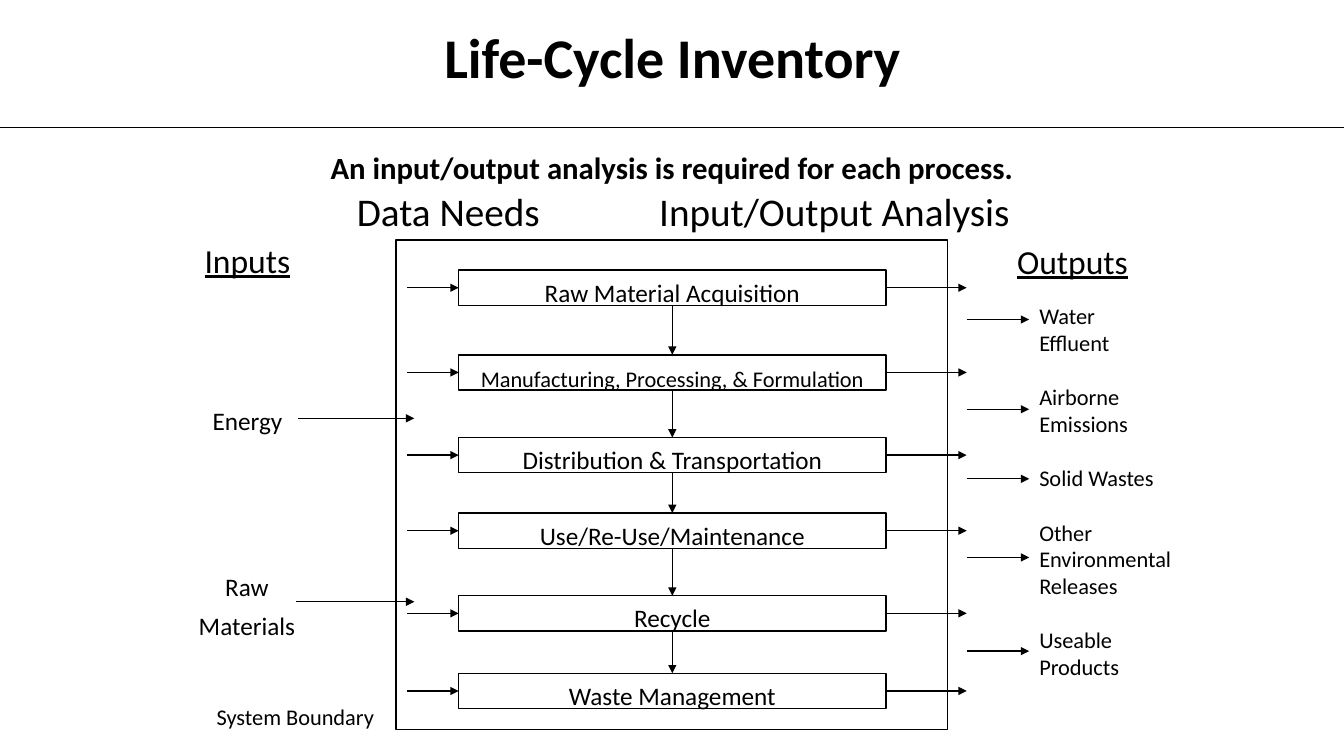
from dataclasses import dataclass

from lxml import etree
from pptx import Presentation
from pptx import util as u
from pptx.dml import color
from pptx.enum import shapes, text
from pptx.oxml import ns

CELL = 0.1  # the grid has square cells, a tenth of an inch wide
COLUMNS, ROWS = 133.33, 75
BLACK = "000000"
FONT = "Calibri"
LEADING = u.Pt(28)
LEFT, CENTER = text.PP_ALIGN.LEFT, text.PP_ALIGN.CENTER
TOP, MIDDLE, BOTTOM = (text.MSO_ANCHOR.TOP, text.MSO_ANCHOR.MIDDLE,
                       text.MSO_ANCHOR.BOTTOM)


@dataclass
class Area:
    column: float
    row: float
    columns: float
    rows: float


@dataclass
class Style:
    size: float
    bold: bool = False
    underline: bool = False
    align: text.PP_ALIGN = CENTER
    anchor: text.MSO_ANCHOR = TOP
    spacing: float | u.Length = 1.0


@dataclass
class Label:
    words: str
    area: Area
    style: Style


@dataclass
class Process:
    name: str
    row: float
    size: float = 18


@dataclass
class Output:
    lines: tuple[str, ...]
    arrow_row: float


TITLE = Label("Life-Cycle Inventory", Area(28.3, 2.4, 76.8, 7.1),
              Style(40, bold=True, anchor=MIDDLE, spacing=0.9))
LABELS = [
    Label("An input/output analysis is required for each process.",
          Area(27.9, 14.5, 77.5, 4.6),
          Style(22, bold=True, anchor=MIDDLE, spacing=0.9)),
    Label("Inputs", Area(18.9, 23.4, 11.3, 4.9),
          Style(24, underline=True, spacing=LEADING)),
    Label("Outputs", Area(99.4, 23.4, 14, 5), Style(24, underline=True)),
    Label("Energy", Area(19.9, 38.8, 9.3, 4.6), Style(18, spacing=LEADING)),
    Label("Raw Materials", Area(18.2, 55.3, 12.6, 8.8),
          Style(18, spacing=LEADING)),
    Label("System Boundary", Area(17.2, 68.2, 24.2, 4.6),
          Style(16, anchor=MIDDLE, spacing=LEADING)),
]
HEADINGS = Label("Data Needs\t\tInput/Output Analysis",
                 Area(35.4, 19.9, 65.4, 3.8),
                 Style(28, align=LEFT, anchor=BOTTOM, spacing=u.Pt(20)))
HEADING_TABS = (20, 30)

BOUNDARY = Area(39.3, 23.8, 54.7, 48.6)
PROCESSES = [
    Process("Raw Material Acquisition", 26.8),
    Process("Manufacturing, Processing, & Formulation", 35.2, 16),
    Process("Distribution & Transportation", 43.4),
    Process("Use/Re-Use/Maintenance", 50.9),
    Process("Recycle", 59.1),
    Process("Waste Management", 66.8),
]
PROCESS_COLUMN, PROCESS_COLUMNS, PROCESS_ROWS = 45.5, 42.4, 3.5
INPUT_COLUMN, OUTPUT_COLUMN, LIST_COLUMN = 40.4, 95.9, 102.1
SUPPLY_ARROWS = [(29.6, 41.5), (29.4, 59.7)]  # start column, row
SUPPLY_END = 41.1

OUTPUT_AREA = Area(LIST_COLUMN, 29.5, 15.4, 38.7)
OUTPUTS = [
    Output(("Water", "Effluent"), 31.7),
    Output(("Airborne", "Emissions"), 40.6),
    Output(("Solid Wastes",), 47.5),
    Output(("Other", "Environmental", "Releases"), 55.3),
    Output(("Useable", "Products"), 64.6),
]
OUTPUT_GAP = u.Pt(19.5)


def grid(cells: float) -> u.Length:
    return u.Inches(cells * CELL)


def place(area: Area) -> tuple[u.Length, ...]:
    return tuple(map(grid, (area.column, area.row, area.columns, area.rows)))


def rgb(value: str) -> color.RGBColor:
    return color.RGBColor.from_string(value)


def prepare(frame, style: Style, side: float = 1, edge: float = 0.5) -> None:
    """Set anchor, wrapping and insets (in grid cells) of a text frame."""
    frame.word_wrap = True
    frame.auto_size = text.MSO_AUTO_SIZE.NONE
    frame.vertical_anchor = style.anchor
    frame.margin_left = frame.margin_right = grid(side)
    frame.margin_top = frame.margin_bottom = grid(edge)


def write(para, words: str, style: Style) -> None:
    para.alignment = style.align
    para.line_spacing = style.spacing
    para.space_before = u.Pt(0)
    span = para.add_run()
    span.text = words
    span.font.name = FONT
    span.font.size = u.Pt(style.size)
    span.font.bold = style.bold
    span.font.underline = style.underline
    span.font.color.rgb = rgb(BLACK)


def move(shape, area: Area) -> None:
    shape.left, shape.top, shape.width, shape.height = place(area)


def add_label(page, label: Label, side: float = 1):
    box = page.shapes.add_textbox(*place(label.area))
    prepare(box.text_frame, label.style, side)
    para = box.text_frame.paragraphs[0]
    write(para, label.words, label.style)
    return para


def add_headings(page) -> None:
    para = add_label(page, HEADINGS, side=0)
    stops = etree.SubElement(para._p.get_or_add_pPr(), ns.qn("a:tabLst"))
    for stop in HEADING_TABS:
        etree.SubElement(stops, ns.qn("a:tab"), pos=str(grid(stop)), algn="l")


def add_box(page, area: Area):
    box = page.shapes.add_shape(shapes.MSO_SHAPE.RECTANGLE, *place(area))
    box.shadow.inherit = False
    box.fill.background()
    box.line.color.rgb = rgb(BLACK)
    box.line.width = u.Pt(1)
    return box


def add_process(page, process: Process):
    box = add_box(page, Area(PROCESS_COLUMN, process.row,
                             PROCESS_COLUMNS, PROCESS_ROWS))
    style = Style(process.size, anchor=MIDDLE, spacing=LEADING)
    prepare(box.text_frame, style, 0, 0)
    write(box.text_frame.paragraphs[0], process.name, style)
    return box


def add_line(page, start: float, end: float, row: float,
             width: float = 1, arrow: bool = True):
    """Draw a level line between two columns."""
    line = page.shapes.add_connector(shapes.MSO_CONNECTOR.STRAIGHT, grid(start),
                                     grid(row), grid(end), grid(row))
    line.line.width = u.Pt(width)
    line.line.color.rgb = rgb(BLACK)
    properties = line._element.spPr
    if arrow:
        etree.SubElement(properties.find(ns.qn("a:ln")), ns.qn("a:tailEnd"),
                         type="triangle")
    etree.SubElement(properties, ns.qn("a:effectLst"))
    return line


def add_flow(page) -> None:
    """Draw the chain of processes with their input and output arrows."""
    previous = None
    for process in PROCESSES:
        box = add_process(page, process)
        middle = process.row + PROCESS_ROWS / 2
        add_line(page, INPUT_COLUMN, PROCESS_COLUMN, middle).end_connect(box, 1)
        add_line(page, PROCESS_COLUMN + PROCESS_COLUMNS, OUTPUT_COLUMN,
                 middle).begin_connect(box, 3)
        if previous is not None:
            step = add_line(page, PROCESS_COLUMN, PROCESS_COLUMN, middle)
            step.begin_connect(previous, 2)
            step.end_connect(box, 0)
        previous = box


def fill_outputs(page, body) -> None:
    move(body, OUTPUT_AREA)
    style = Style(16, align=LEFT)
    frame = body.text_frame
    prepare(frame, style)
    para = frame.paragraphs[0]
    for index, output in enumerate(OUTPUTS):
        for number, words in enumerate(output.lines):
            if index or number:
                para = frame.add_paragraph()
            write(para, words, style)
            if index and not number:
                para.space_before = OUTPUT_GAP
            properties = para._p.get_or_add_pPr()
            properties.set("marL", "0")
            properties.set("indent", "0")
            etree.SubElement(properties, ns.qn("a:buNone"))
        add_line(page, OUTPUT_COLUMN, LIST_COLUMN, output.arrow_row)


def main() -> None:
    deck = Presentation()
    deck.slide_width, deck.slide_height = grid(COLUMNS), grid(ROWS)
    page = deck.slides.add_slide(deck.slide_layouts[1])
    title, body = page.placeholders
    move(title, TITLE.area)
    prepare(title.text_frame, TITLE.style)
    write(title.text_frame.paragraphs[0], TITLE.words, TITLE.style)
    add_line(page, 0, COLUMNS, 12.6, width=0.5, arrow=False)
    for label in LABELS:
        add_label(page, label)
    add_headings(page)
    add_box(page, BOUNDARY)
    add_flow(page)
    for column, row in SUPPLY_ARROWS:
        add_line(page, column, SUPPLY_END, row)
    fill_outputs(page, body)
    deck.save("out.pptx")


if __name__ == "__main__":
    main()
